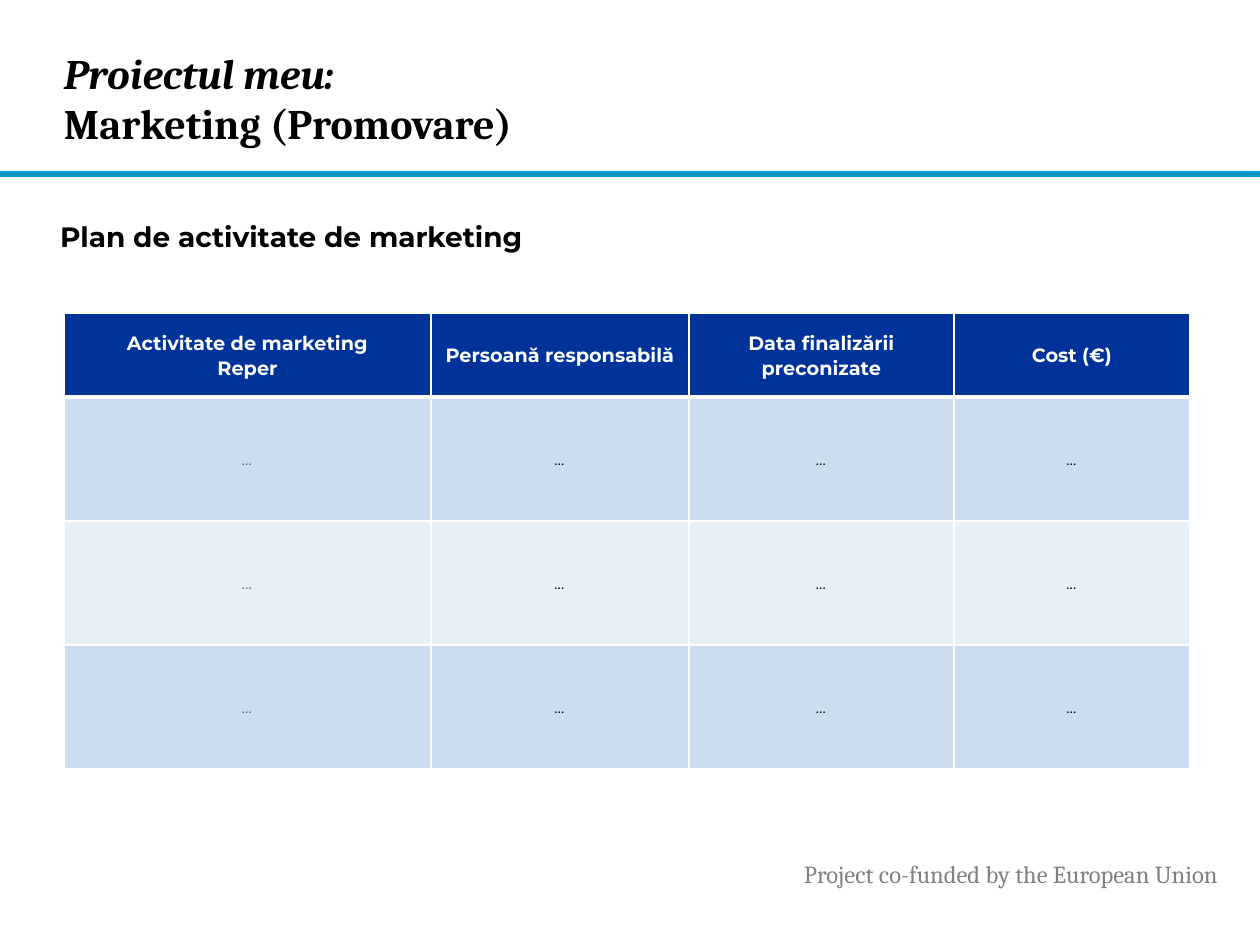
from lxml import etree
from pptx import Presentation
from pptx import util as u
from pptx.dml.color import RGBColor
from pptx.enum import shapes, text
from pptx.oxml import ns

PX = 914400 // 126
HEX = {
    "black": "000000", "white": "FFFFFF", "grey": "808080", "teal": "3C7486",
    "bar": "0C94B7", "edge": "0096D3", "navy": "003399",
    "mid": "CCDDEF", "pale": "E7EFF7",
}
SERIF, SANS = "Cambria", "Montserrat"


def color(name):
    return RGBColor.from_string(HEX[name])


class Deck:
    def __init__(self, wide, high):
        self.prs = Presentation()
        self.prs.slide_width, self.prs.slide_height = u.Inches(wide), u.Inches(high)
        self.slide = self.prs.slides.add_slide(self.prs.slide_layouts[6])

    def font(self, font, face, size, tint, bold=False, italic=None):
        font.name, font.size, font.bold = face, u.Pt(size), bold
        font.italic = italic
        font.color.rgb = color(tint)

    def bar(self, *box):
        bar = self.slide.shapes.add_shape(
            shapes.MSO_SHAPE.RECTANGLE, *(n * PX for n in box))
        bar.shadow.inherit = False
        bar.fill.solid()
        bar.fill.fore_color.rgb = color("bar")
        bar.line.color.rgb = color("edge")
        bar.line.width = u.Pt(1)

    def label(self, box, runs, face, size, tint, bold=False, pad=(0, 6), mid=False):
        frame = self.slide.shapes.add_textbox(*(n * PX for n in box)).text_frame
        frame.word_wrap = True
        frame.margin_left = frame.margin_right = pad[0] * PX
        frame.margin_top = frame.margin_bottom = pad[1] * PX
        if mid:
            frame.vertical_anchor = text.MSO_ANCHOR.MIDDLE
        para = frame.paragraphs[0]
        self.font(para.font, face, size, tint, bold)
        for i, (words, slant) in enumerate(runs):
            if i:
                para.add_line_break()
            run = para.add_run()
            run.text = words
            if slant:
                run.font.italic = True

    def edges(self, cell, **widths):
        props = cell._tc.get_or_add_tcPr()
        for i, side in enumerate("LRTB"):
            line = etree.Element(ns.qn("a:ln" + side), w=str(u.Pt(widths.get(side, 1))))
            fill = etree.SubElement(line, ns.qn("a:solidFill"))
            etree.SubElement(fill, ns.qn("a:srgbClr"), val=HEX["white"])
            props.insert(i, line)

    def cell(self, cell, lines, back, size, tint, bold, italic):
        cell.fill.solid()
        cell.fill.fore_color.rgb = color(back)
        cell.vertical_anchor = text.MSO_ANCHOR.MIDDLE
        cell.margin_left = cell.margin_right = 9 * PX
        cell.margin_top = cell.margin_bottom = 0
        cell.text = lines
        for para in cell.text_frame.paragraphs:
            para.alignment = text.PP_ALIGN.CENTER
            para.line_spacing = 1.07
            self.font(para.font, SANS, size, tint, bold, italic)

    def table(self, left, top, cols, rows, heads):
        grid = self.slide.shapes.add_table(
            len(rows), len(cols), left * PX, top * PX,
            sum(cols) * PX, sum(rows) * PX).table
        for col, wide in zip(grid.columns, cols):
            col.width = wide * PX
        for r, high in enumerate(rows):
            grid.rows[r].height = high * PX
            for c, head in enumerate(heads):
                cell = grid.cell(r, c)
                if r == 0:
                    self.cell(cell, head, "navy", 11, "white", True, False)
                    self.edges(cell, B=3)
                else:
                    back = "mid" if r % 2 else "pale"
                    tint = "black" if c else "teal"
                    self.cell(cell, "…", back, 9, tint, False, True)
                    self.edges(cell, T=3 if r == 1 else 1)


def main():
    deck = Deck(10, 7.5)
    deck.bar(0, 172, 1260, 4)
    deck.label((791, 853, 461, 43),
               [("Project co-funded by the European Union", False)],
               SERIF, 14, "grey", pad=(13, 6))
    deck.label((60, 214, 1070, 60),
               [("Plan de activitate de marketing", False)],
               SANS, 16, "black", bold=True)
    deck.table(64, 313, (367, 258, 265, 236), (84, 124, 124, 124),
               ("Activitate de marketing\nReper", "Persoană responsabilă",
                "Data finalizării preconizate", "Cost (€)"))
    deck.label((64, 23, 916, 150),
               [("Proiectul meu:", True), ("Marketing (Promovare)", False)],
               SERIF, 24, "black", bold=True, pad=(0, 0), mid=True)
    deck.prs.save("out.pptx")


if __name__ == "__main__":
    main()
